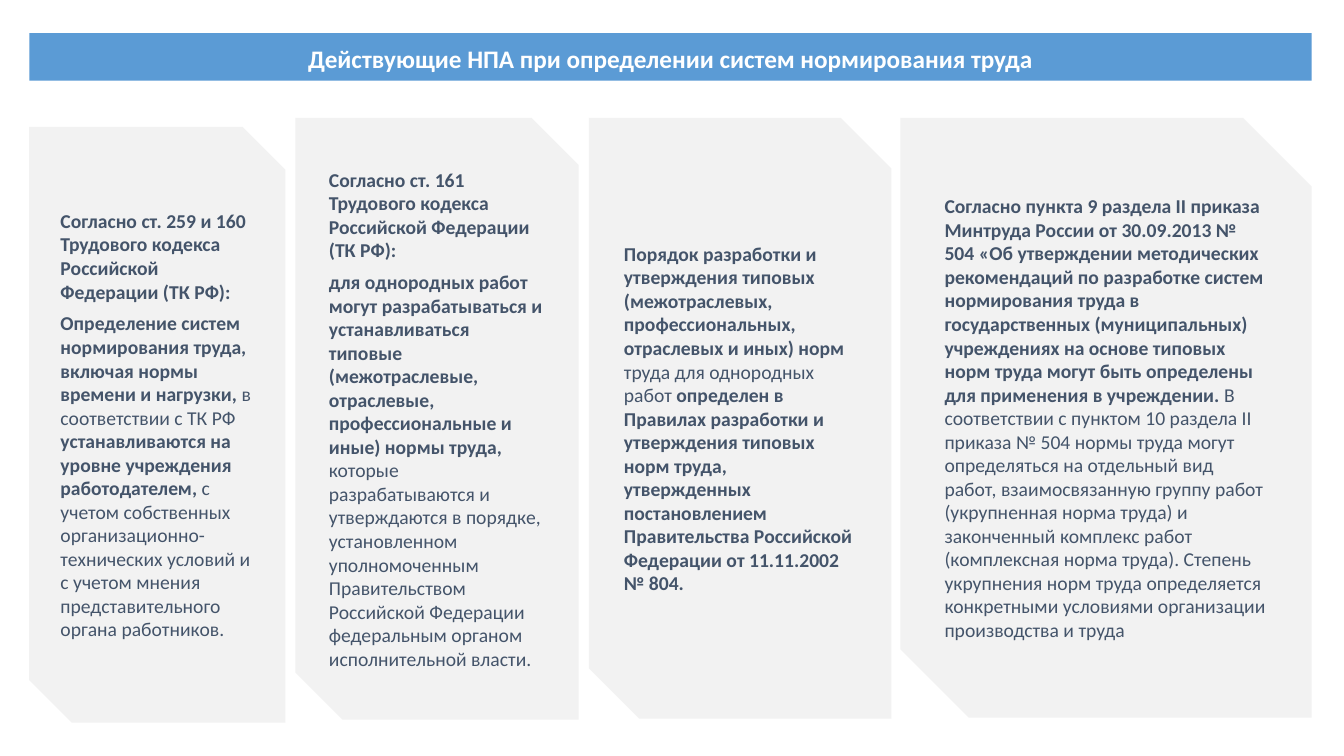
from pptx import Presentation
from pptx import util as u
from pptx.dml import color
from pptx.enum import shapes, text


def add_panel(kind, left, top, width, height, fill):
    panel = slide.shapes.add_shape(
        kind, u.Inches(left), u.Inches(top), u.Inches(width), u.Inches(height))
    panel.shadow.inherit = False
    panel.fill.solid()
    panel.fill.fore_color.rgb = color.RGBColor.from_string(fill)
    panel.line.fill.background()
    panel.text_frame.word_wrap = True
    panel.text_frame.vertical_anchor = text.MSO_ANCHOR.MIDDLE
    return panel.text_frame


def style(font, size, hex_color, bold):
    font.name = "Calibri"
    font.size = u.Pt(size)
    font.bold = bold
    font.color.rgb = color.RGBColor.from_string(hex_color)


deck = Presentation()
deck.slide_width = u.Inches(13.33)
deck.slide_height = u.Inches(7.5)
slide = deck.slides.add_slide(deck.slide_layouts[6])

heading = add_panel(shapes.MSO_SHAPE.RECTANGLE, 0.29, 0.33, 12.72, 0.47, "5B9BD5")
heading.text = "Действующие НПА при определении систем нормирования труда"
heading_line = heading.paragraphs[0]
heading_line.alignment = text.PP_ALIGN.CENTER
heading_line.line_spacing = u.Pt(24)
style(heading_line.runs[0].font, 18, "FFFFFF", True)

# Each paragraph alternates bold and regular passages, starting with bold.
regulations = [
    ((0.29, 1.26, 2.54, 5.91), [
        ["Согласно ст. 259 и 160 Трудового кодекса Российской Федерации (ТК РФ):"],
        ["Определение систем нормирования труда, включая нормы времени и нагрузки, ",
         "в соответствии с ТК РФ ",
         "устанавливаются на уровне учреждения работодателем, ",
         "с учетом собственных организационно-технических условий и с учетом мнения "
         "представительного органа работников."],
    ]),
    ((2.93, 1.17, 2.81, 5.97), [
        ["Согласно ст. 161 Трудового кодекса Российской Федерации (ТК РФ):"],
        ["для однородных работ могут разрабатываться и устанавливаться типовые "
         "(межотраслевые, отраслевые, профессиональные и иные) нормы труда, ",
         "которые разрабатываются и утверждаются в порядке, установленном уполномоченным "
         "Правительством Российской Федерации федеральным органом исполнительной власти."],
    ]),
    ((5.84, 1.17, 3, 5.96), [
        ["Порядок разработки и утверждения типовых (межотраслевых, профессиональных, "
         "отраслевых и иных) норм ",
         "труда для однородных работ ",
         "определен в Правилах разработки и утверждения типовых норм труда, утвержденных "
         "постановлением Правительства Российской Федерации от 11.11.2002 № 804."],
    ]),
    ((8.93, 1.17, 4.08, 5.95), [
        ["Согласно пункта 9 раздела II приказа Минтруда России от 30.09.2013 № 504 "
         "«Об утверждении методических рекомендаций по разработке систем нормирования труда "
         "в государственных (муниципальных) учреждениях на основе типовых норм труда могут "
         "быть определены для применения в учреждении. ",
         "В соответствии с пунктом 10 раздела II приказа № 504 нормы труда могут определяться "
         "на отдельный вид работ, взаимосвязанную группу работ (укрупненная норма труда) и "
         "законченный комплекс работ (комплексная норма труда). Степень укрупнения норм труда "
         "определяется конкретными условиями организации производства и труда"],
    ]),
]

for bounds, provisions in regulations:
    card = add_panel(shapes.MSO_SHAPE.SNIP_2_DIAG_RECTANGLE, *bounds, "F2F2F2")
    for index, passages in enumerate(provisions):
        provision = card.add_paragraph() if index else card.paragraphs[0]
        provision.alignment = text.PP_ALIGN.LEFT
        provision.space_after = u.Pt(6)
        for order, passage in enumerate(passages):
            run = provision.add_run()
            run.text = passage
            style(run.font, 14, "44546A", order % 2 == 0)

deck.save("out.pptx")
